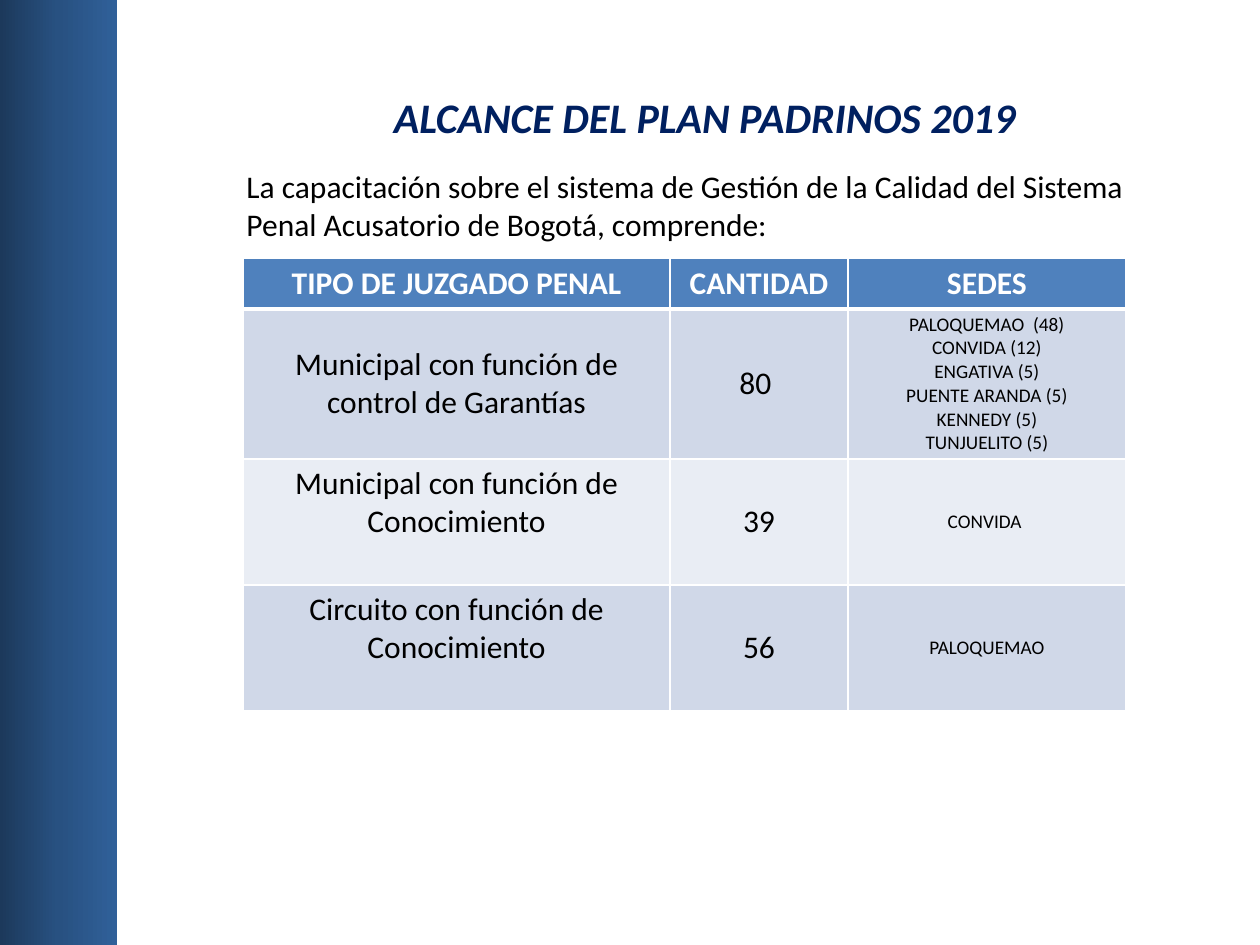
"""Builds the slide on the scope of the Plan Padrinos 2019."""
from copy import deepcopy
from dataclasses import dataclass

from lxml import etree
from pptx import Presentation
from pptx.dml.color import RGBColor
from pptx.enum import shapes, text
from pptx.oxml.ns import qn
from pptx.util import Cm, Pt


@dataclass(frozen=True)
class Theme:
    font: str = "Calibri"
    title: str = "002060"
    ink: str = "000000"
    white: str = "FFFFFF"
    header: str = "4F81BD"
    bands: tuple = ("D0D8E8", "E9EDF4")
    sidebar: tuple = ("1C395B", "285181", "306099")
    title_size: int = 24
    body_size: int = 18
    small_size: int = 11
    grid: int = 1
    header_rule: int = 3


class Page:
    def __init__(self, deck, theme):
        self.theme = theme
        self.slide = deck.slides.add_slide(deck.slide_layouts[5])

    def style(self, frame, size, color, bold=False, italic=False, align=None):
        for para in frame.paragraphs:
            para.alignment = align
            for span in para.runs:
                font = span.font
                font.name, font.size = self.theme.font, Pt(size)
                font.bold, font.italic = bold, italic
                font.color.rgb = RGBColor.from_string(color)

    def sidebar(self, left, top, width, height):
        bar = self.slide.shapes.add_shape(
            shapes.MSO_SHAPE.RECTANGLE, Cm(left), Cm(top), Cm(width), Cm(height))
        bar.shadow.inherit = False
        bar.line.fill.background()
        bar.fill.gradient()
        bar.fill.gradient_angle = 0
        stops = bar.fill._fill._gradFill.find(qn("a:gsLst"))
        stops.insert(1, deepcopy(stops[0]))
        for index, color in enumerate(self.theme.sidebar):
            stop = bar.fill.gradient_stops[index]
            stop.position = index / 2
            stop.color.rgb = RGBColor.from_string(color)

    def title(self, words, left, top, width, height):
        box = self.slide.shapes.title
        box.left, box.top, box.width, box.height = map(Cm, (left, top, width, height))
        box.text_frame.text = words
        box.text_frame.vertical_anchor = text.MSO_ANCHOR.MIDDLE
        self.style(box.text_frame, self.theme.title_size, self.theme.title,
                   bold=True, italic=True, align=text.PP_ALIGN.CENTER)

    def paragraph(self, words, left, top, width, height):
        box = self.slide.shapes.add_textbox(Cm(left), Cm(top), Cm(width), Cm(height))
        box.text_frame.word_wrap = True
        box.text_frame.text = words
        self.style(box.text_frame, self.theme.body_size, self.theme.ink)

    def borders(self, cell, top, bottom):
        properties = cell._tc.get_or_add_tcPr()
        widths = {"lnL": self.theme.grid, "lnR": self.theme.grid, "lnT": top, "lnB": bottom}
        for side, width in widths.items():
            line = etree.SubElement(properties, qn(f"a:{side}"), w=str(Pt(width)))
            fill = etree.SubElement(line, qn("a:solidFill"))
            etree.SubElement(fill, qn("a:srgbClr"), val=self.theme.white)

    def cell(self, cell, words, row, column):
        theme = self.theme
        header = row == 0
        self.borders(cell, theme.header_rule if row == 1 else theme.grid,
                     theme.header_rule if header else theme.grid)
        cell.fill.solid()
        cell.fill.fore_color.rgb = RGBColor.from_string(
            theme.header if header else theme.bands[(row - 1) % 2])
        cell.vertical_anchor = text.MSO_ANCHOR.MIDDLE
        cell.margin_top = Cm(0.05)
        cell.margin_bottom = Cm(0.82 if row > 1 and column == 0 else 0.05)
        cell.text_frame.text = words
        self.style(cell.text_frame,
                   theme.small_size if column == 2 and not header else theme.body_size,
                   theme.white if header else theme.ink,
                   bold=header, align=text.PP_ALIGN.CENTER)

    def table(self, rows, left, top, widths, heights):
        table = self.slide.shapes.add_table(
            len(rows), len(widths), Cm(left), Cm(top),
            Cm(sum(widths)), Cm(sum(heights))).table
        for column, width in zip(table.columns, widths):
            column.width = Cm(width)
        for row, height in zip(table.rows, heights):
            row.height = Cm(height)
        for row, entries in enumerate(rows):
            for column, words in enumerate(entries):
                self.cell(table.cell(row, column), words, row, column)


COURTS = [
    ("TIPO DE JUZGADO PENAL", "CANTIDAD", "SEDES"),
    ("Municipal con función de control de Garantías", "80 ",
     "PALOQUEMAO  (48)\nCONVIDA (12)\nENGATIVA (5)\n"
     "PUENTE ARANDA (5)\nKENNEDY (5)\nTUNJUELITO (5)"),
    ("Municipal con función de Conocimiento", "39", "CONVIDA "),
    ("Circuito con función de Conocimiento", "56", "PALOQUEMAO"),
]


def main():
    deck = Presentation()
    deck.slide_width, deck.slide_height = Cm(25.4), Cm(19.05)
    page = Page(deck, Theme())
    page.sidebar(0, 0, 2.36, 19.05)
    page.title("ALCANCE DEL PLAN PADRINOS 2019", 4.29, 1.57, 19.84, 1.57)
    page.paragraph("La capacitación sobre el sistema de Gestión de la Calidad del "
                   "Sistema Penal Acusatorio de Bogotá, comprende:", 4.72, 3.25, 19, 1.8)
    page.table(COURTS, 4.9, 5.21, (8.61, 3.58, 5.61), (1.02, 3.02, 2.54, 2.54))
    deck.save("out.pptx")


if __name__ == "__main__":
    main()
